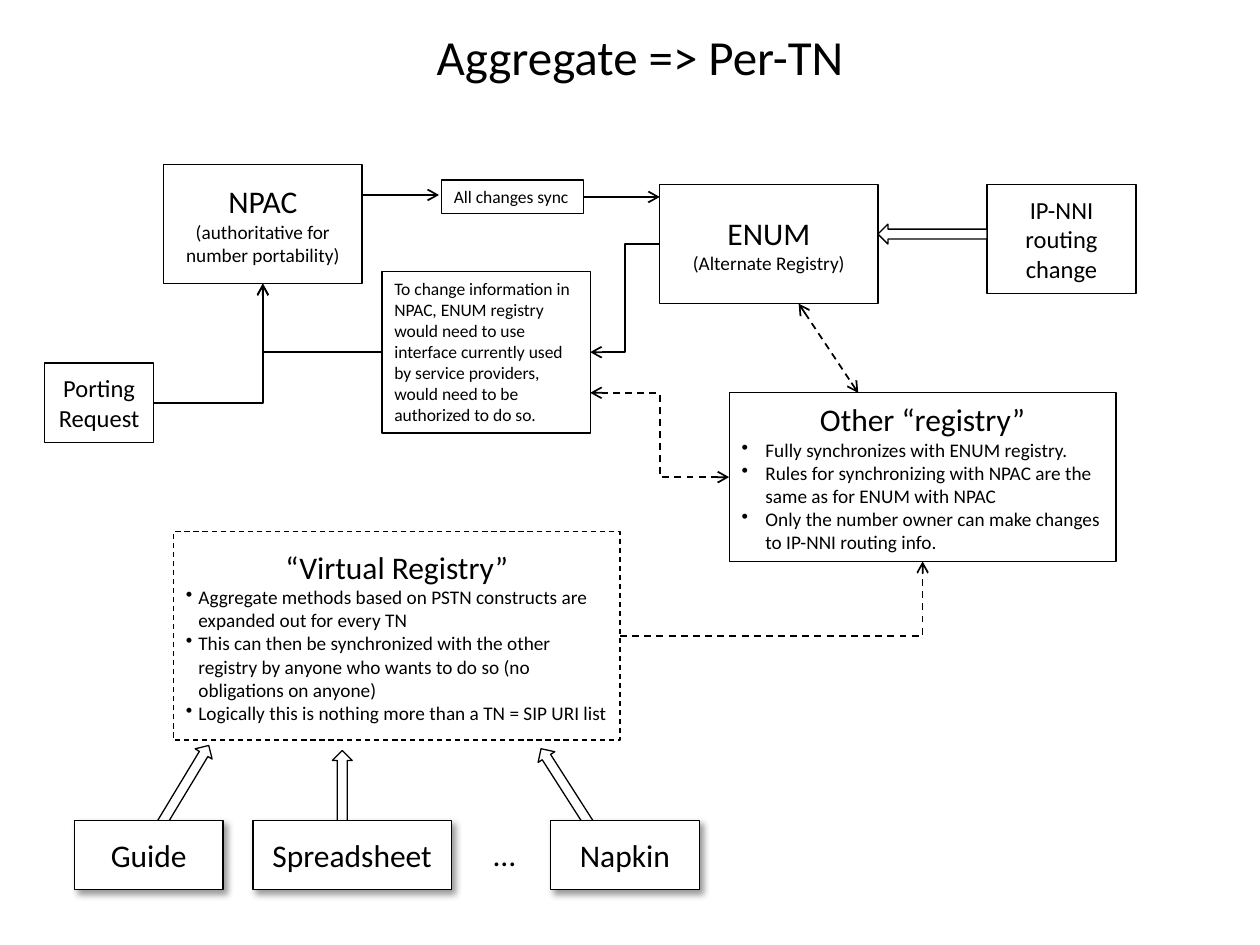
from lxml.etree import SubElement
from pptx import Presentation
from pptx.dml.color import RGBColor
from pptx.enum.dml import MSO_LINE
from pptx.enum.shapes import MSO_CONNECTOR, MSO_SHAPE
from pptx.enum.text import MSO_ANCHOR, MSO_AUTO_SIZE, PP_ALIGN
from pptx.oxml.ns import qn
from pptx.util import Cm, Pt

TOP, LEFT, BOTTOM, RIGHT = range(4)


def color(hex_string):
    return RGBColor.from_string(hex_string)


def write(paragraph, text, size=18, align=PP_ALIGN.CENTER, bullet_indent=None):
    """Fill one paragraph, with a hanging bullet if an indent in cm is given."""
    paragraph.alignment = align
    run = paragraph.add_run()
    run.text = text
    run.font.name = Diagram.font
    run.font.size = Pt(size)
    run.font.color.rgb = color(Diagram.ink)
    if bullet_indent:
        properties = paragraph._p.get_or_add_pPr()
        properties.set("marL", str(Cm(bullet_indent)))
        properties.set("indent", str(-Cm(bullet_indent)))
        SubElement(properties, qn("a:buChar"), char="•")


class Diagram:
    font = "Calibri"
    ink = "000000"
    paper = "FFFFFF"

    def __init__(self, slide):
        self.slide = slide

    def outline(self, shape, dashed=False):
        shape.shadow.inherit = False
        shape.fill.solid()
        shape.fill.fore_color.rgb = color(self.paper)
        shape.line.color.rgb = color(self.ink)
        shape.line.width = Pt(0.75)
        if dashed:
            shape.line.dash_style = MSO_LINE.DASH

    def box(self, left, top, width, height, heading="", size=18, detail=None,
            bullets=(), bullet_indent=None, dashed=False):
        shape = self.slide.shapes.add_shape(
            MSO_SHAPE.RECTANGLE, Cm(left), Cm(top), Cm(width), Cm(height))
        self.outline(shape, dashed)
        frame = shape.text_frame
        frame.word_wrap = True
        frame.vertical_anchor = MSO_ANCHOR.MIDDLE
        write(frame.paragraphs[0], heading, size=size)
        if detail:
            write(frame.add_paragraph(), detail, size=11)
        for bullet in bullets:
            write(frame.add_paragraph(), bullet, size=11,
                  align=PP_ALIGN.LEFT, bullet_indent=bullet_indent)
        return shape

    def label(self, left, top, width, height, text, size=10, wrap=False,
              framed=True, align=PP_ALIGN.LEFT, anchor=MSO_ANCHOR.TOP):
        shape = self.slide.shapes.add_textbox(
            Cm(left), Cm(top), Cm(width), Cm(height))
        if framed:
            self.outline(shape)
        frame = shape.text_frame
        frame.word_wrap = wrap
        frame.auto_size = MSO_AUTO_SIZE.SHAPE_TO_FIT_TEXT
        frame.vertical_anchor = anchor
        write(frame.paragraphs[0], text, size=size, align=align)
        return shape

    def block_arrow(self, left, top, rotation=0):
        shape = self.slide.shapes.add_shape(
            MSO_SHAPE.LEFT_ARROW, Cm(left), Cm(top), Cm(2.2), Cm(0.4))
        shape.rotation = rotation
        self.outline(shape)

    def drop_shadow(self, shape):
        effects = shape._element.spPr.find(qn("a:effectLst"))
        shadow = SubElement(effects, qn("a:outerShdw"), blurRad=str(Pt(4)),
                            dist=str(Pt(3)), dir="2700000", algn="tl",
                            rotWithShape="0")
        tint = SubElement(shadow, qn("a:srgbClr"), val=self.ink)
        SubElement(tint, qn("a:alpha"), val="40000")

    def connect(self, start, end, bends=0, dashed=False, both_ends=False):
        """Each end is either an (x, y) point in cm or a (shape, side) pair."""
        kind = MSO_CONNECTOR.ELBOW if bends else MSO_CONNECTOR.STRAIGHT
        line = self.slide.shapes.add_connector(kind, 0, 0, 0, 0)
        if isinstance(start[0], (int, float)):
            line.begin_x, line.begin_y = map(Cm, start)
        else:
            line.begin_connect(*start)
        if isinstance(end[0], (int, float)):
            line.end_x, line.end_y = map(Cm, end)
        else:
            line.end_connect(*end)
        properties = line._element.spPr
        if bends == 1:
            properties.find(qn("a:prstGeom")).set("prst", "bentConnector2")
        line.line.color.rgb = color(self.ink)
        line.line.width = Pt(1)
        if dashed:
            line.line.dash_style = MSO_LINE.DASH
        stroke = properties.find(qn("a:ln"))
        if both_ends:
            SubElement(stroke, qn("a:headEnd"), type="arrow")
        SubElement(stroke, qn("a:tailEnd"), type="arrow")
        SubElement(properties, qn("a:effectLst"))


def main():
    presentation = Presentation()
    presentation.slide_width, presentation.slide_height = Cm(25.4), Cm(19.05)
    slide = presentation.slides.add_slide(presentation.slide_layouts[6])
    diagram = Diagram(slide)

    # Title
    diagram.label(2.1, 0.33, 21.6, 1.6, "Aggregate => Per-TN", size=28,
                  wrap=True, framed=False, align=PP_ALIGN.CENTER,
                  anchor=MSO_ANCHOR.MIDDLE)

    # Registries and requests
    npac = diagram.box(3.3, 3.32, 4, 2.4, "NPAC",
                       detail="(authoritative for number portability)")
    porting = diagram.box(0.9, 7.32, 2.2, 1.6, "Porting Request", size=14)
    enum = diagram.box(13.3, 3.72, 4.4, 2.4, "ENUM",
                       detail="(Alternate Registry)")
    diagram.box(19.9, 3.72, 3, 2.2, "IP-NNI routing change", size=14)
    other = diagram.box(
        14.7, 7.92, 7.8, 3.4, "Other “registry”", bullet_indent=0.48,
        bullets=["Fully synchronizes with ENUM registry.",
                 "Rules for synchronizing with NPAC are the same as for ENUM "
                 "with NPAC",
                 "Only the number owner can make changes to IP-NNI routing "
                 "info."])
    virtual = diagram.box(
        3.5, 10.72, 9, 4.2, "“Virtual Registry”", bullet_indent=0.25,
        dashed=True,
        bullets=["Aggregate methods based on PSTN constructs are expanded out "
                 "for every TN",
                 "This can then be synchronized with the other registry by "
                 "anyone who wants to do so (no obligations on anyone)",
                 "Logically this is nothing more than a TN = SIP URI list"])

    # Notes on the flows
    sync = diagram.label(8.9, 3.63, 2.86, 0.68, "All changes sync")
    change = diagram.label(
        7.7, 5.47, 4.2, 3.26,
        "To change information in NPAC, ENUM registry would need to use "
        "interface currently used by service providers, would need to be "
        "authorized to do so.", wrap=True)

    # Block arrows, then the data sources that cover their ends
    for left, top, rotation in [(17.7, 4.52, 0), (2.54, 15.77, 121.1),
                                (5.8, 16.03, 90), (10.4, 15.82, 57.4)]:
        diagram.block_arrow(left, top, rotation)
    for left, width, name in [(1.5, 3, "Guide"), (5.1, 4, "Spreadsheet"),
                              (11.1, 3, "Napkin")]:
        diagram.drop_shadow(diagram.box(left, 16.54, width, 1.4, name))
    diagram.label(9.7, 16.71, 0.97, 1.02, "…", size=18, framed=False)

    # Flows
    diagram.connect((7.3, 3.93), (8.85, 3.93))
    diagram.connect((sync, RIGHT), (13.3, 3.97))
    diagram.connect((enum, LEFT), (change, RIGHT), bends=2)
    diagram.connect((change, LEFT), (npac, BOTTOM), bends=1)
    diagram.connect((porting, RIGHT), (npac, BOTTOM), bends=1)
    diagram.connect((16.1, 6.12), (17.3, 7.92), dashed=True, both_ends=True)
    diagram.connect((other, LEFT), (11.9, 7.92), bends=2, dashed=True,
                    both_ends=True)
    diagram.connect((virtual, RIGHT), (other, BOTTOM), bends=1, dashed=True)

    presentation.save("out.pptx")


if __name__ == "__main__":
    main()
